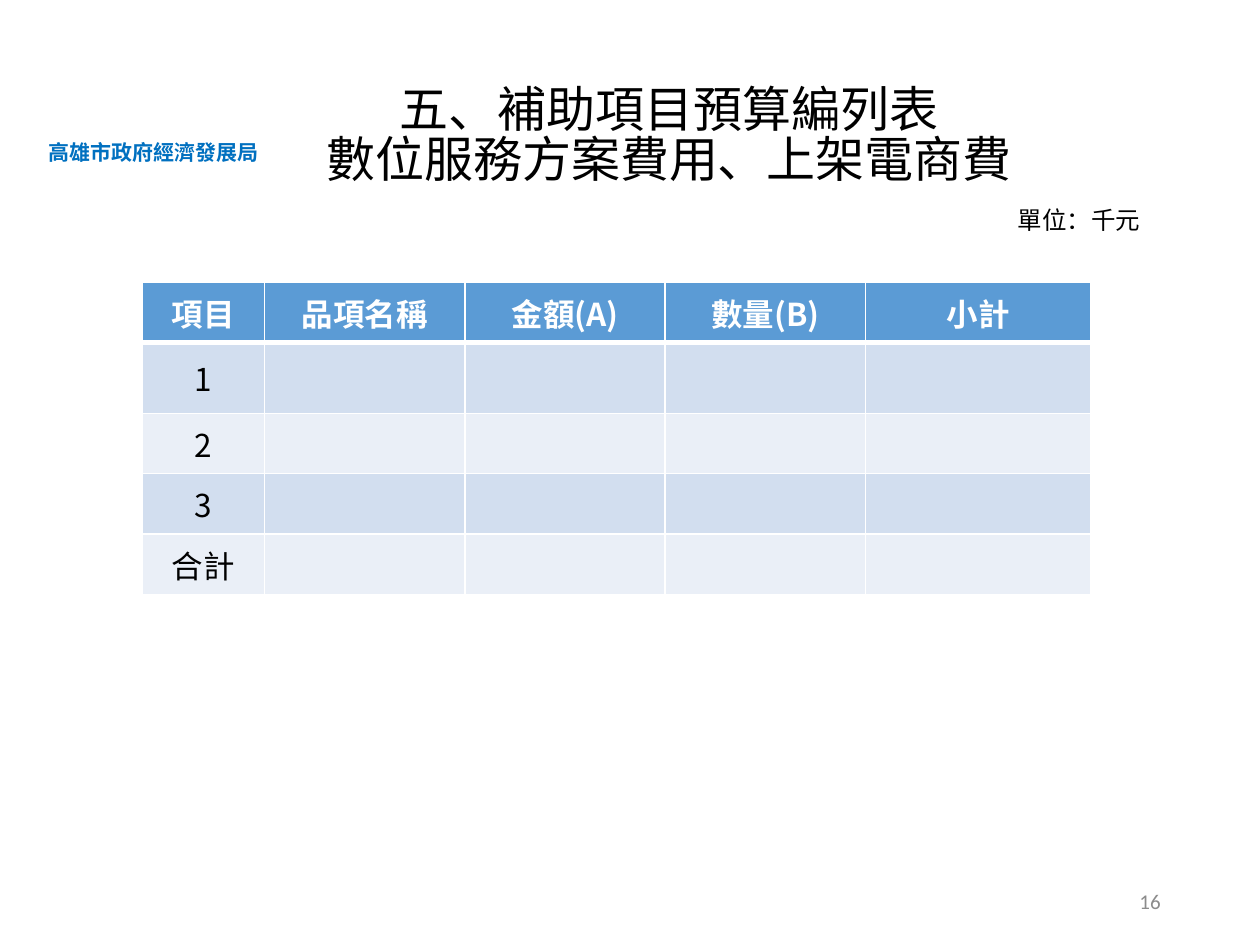
from dataclasses import dataclass

from lxml.etree import SubElement
from pptx import Presentation
from pptx.dml.color import RGBColor
from pptx.enum.text import MSO_ANCHOR, PP_ALIGN
from pptx.oxml import parse_xml
from pptx.oxml.ns import nsdecls, qn
from pptx.util import Inches, Pt


@dataclass(frozen=True)
class Theme:
    cjk: str = "Noto Sans CJK SC"
    latin: str = "Calibri"
    black: str = "000000"
    white: str = "FFFFFF"
    agency: str = "0070C0"
    page: str = "8C8C8C"
    header: str = "5B9BD5"
    bands: tuple = ("D2DEEF", "EAEFF7")
    title_size: int = 28
    table_size: int = 18
    unit_size: int = 14
    small_size: int = 12
    rule: int = 1
    header_rule: int = 3


THEME = Theme()


def style(p, size, color, bold=False, align=PP_ALIGN.LEFT, face=THEME.cjk):
    """Format a paragraph, for both Latin and East Asian text."""
    p.alignment = align
    font = p.font
    font.size, font.bold = Pt(size), bold
    font.color.rgb = RGBColor.from_string(color)
    font.name = face
    SubElement(p._p.pPr.find(qn("a:defRPr")), qn("a:ea"), typeface=face)


def add_label(s, box, text, size, color, wrap=True, anchor=MSO_ANCHOR.TOP, **fmt):
    tf = s.shapes.add_textbox(*map(Inches, box)).text_frame
    tf.word_wrap = wrap
    tf.vertical_anchor = anchor
    tf.text = text
    style(tf.paragraphs[0], size, color, **fmt)


def add_title(s, box, lines):
    sp = s.shapes.title
    sp.left, sp.top, sp.width, sp.height = map(Inches, box)
    tf = sp.text_frame
    tf.vertical_anchor = MSO_ANCHOR.MIDDLE
    tf.text = "\n".join(lines)
    for p in tf.paragraphs:
        p.line_spacing = 0.85
        style(p, THEME.title_size, THEME.black, align=PP_ALIGN.CENTER)


def set_borders(cell, top, bottom):
    """Draw white rules round a cell; widths are in points."""
    widths = {"lnL": THEME.rule, "lnR": THEME.rule, "lnT": top, "lnB": bottom}
    tc_pr = cell._tc.get_or_add_tcPr()
    for i, (tag, width) in enumerate(widths.items()):
        tc_pr.insert(i, parse_xml(
            f'<a:{tag} {nsdecls("a")} w="{Pt(width)}"><a:solidFill>'
            f'<a:srgbClr val="{THEME.white}"/></a:solidFill></a:{tag}>'))


def add_budget_table(s, box, headings, items, col_widths, row_heights):
    rows = [headings] + [[item] + [""] * (len(headings) - 1) for item in items]
    table = s.shapes.add_table(len(rows), len(headings), *map(Inches, box)).table
    for col, width in zip(table.columns, col_widths):
        col.width = Inches(width)
    for i, (row, height) in enumerate(zip(rows, row_heights)):
        table.rows[i].height = Inches(height)
        is_header = i == 0
        fill = THEME.header if is_header else THEME.bands[(i - 1) % 2]
        color = THEME.white if is_header else THEME.black
        top = THEME.header_rule if i == 1 else THEME.rule
        bottom = THEME.header_rule if is_header else THEME.rule
        for j, text in enumerate(row):
            cell = table.cell(i, j)
            cell.text = text
            cell.vertical_anchor = MSO_ANCHOR.MIDDLE
            cell.fill.solid()
            cell.fill.fore_color.rgb = RGBColor.from_string(fill)
            set_borders(cell, top, bottom)
            style(cell.text_frame.paragraphs[0], THEME.table_size, color,
                  bold=is_header, align=PP_ALIGN.CENTER)


def main():
    prs = Presentation()
    prs.slide_width, prs.slide_height = Inches(10), Inches(7.5)
    s = prs.slides.add_slide(prs.slide_layouts[5])

    # Heading: agency, title and unit
    add_label(s, (0.29, 1.06, 1.88, 0.3), "高雄市政府經濟發展局",
              THEME.small_size, THEME.agency, wrap=False, bold=True)
    add_title(s, (1.49, 0.44, 7.64, 1.31),
              ["五、補助項目預算編列表", "數位服務方案費用、上架電商費"])
    add_label(s, (7.98, 1.58, 1.6, 0.34), "單位：千元",
              THEME.unit_size, THEME.black)

    # Budget table
    add_budget_table(s, (1.13, 2.24, 7.54, 2.48),
                     ["項目", "品項名稱", "金額(A)", "數量(B)", "小計"],
                     ["1", "2", "3", "合計"],
                     col_widths=[0.97, 1.59, 1.59, 1.59, 1.79],
                     row_heights=[0.48, 0.56, 0.48, 0.48, 0.48])

    # Page number
    add_label(s, (7.06, 6.95, 2.25, 0.4), "16", THEME.small_size, THEME.page,
              anchor=MSO_ANCHOR.MIDDLE, align=PP_ALIGN.RIGHT, face=THEME.latin)

    prs.save("out.pptx")


if __name__ == "__main__":
    main()
